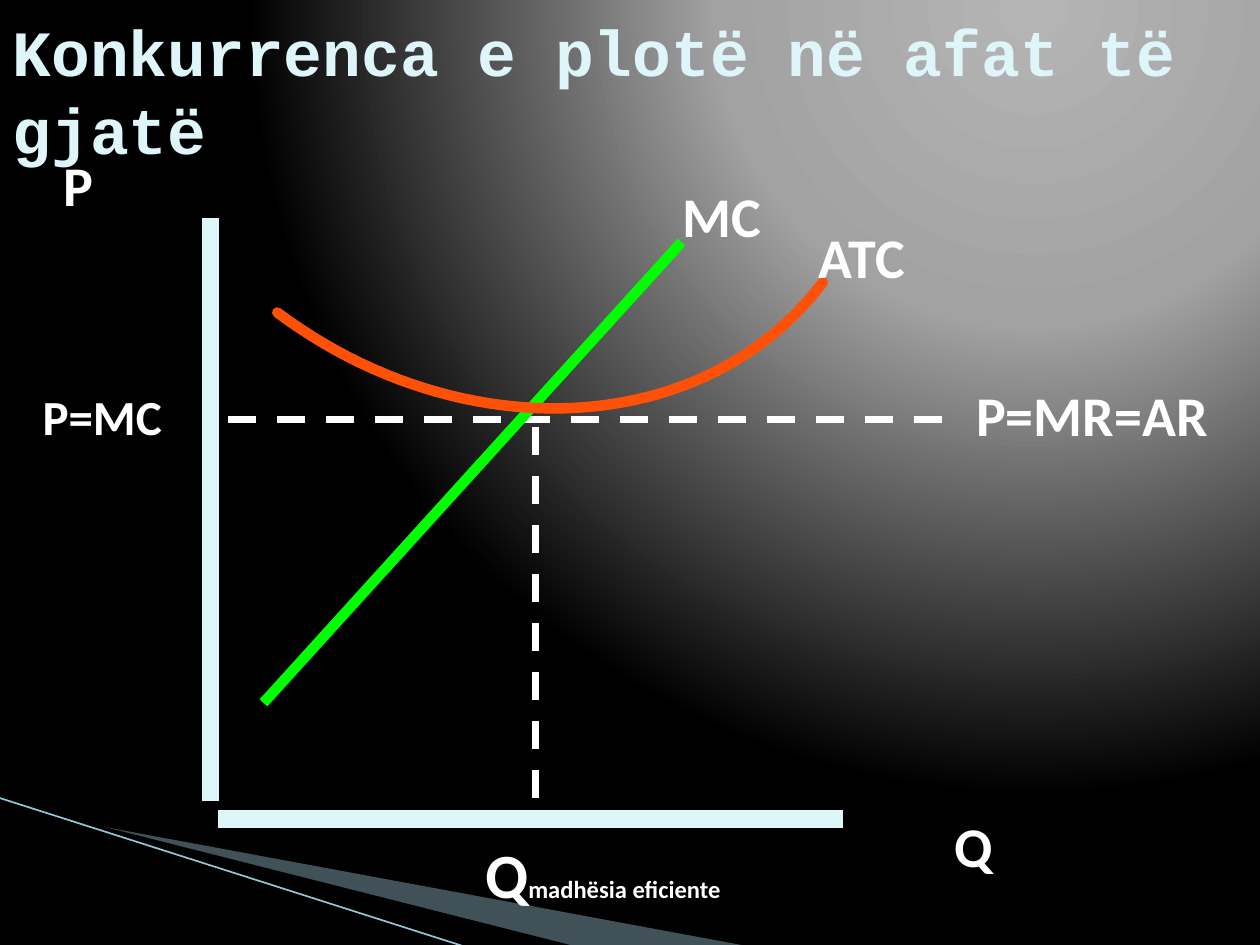
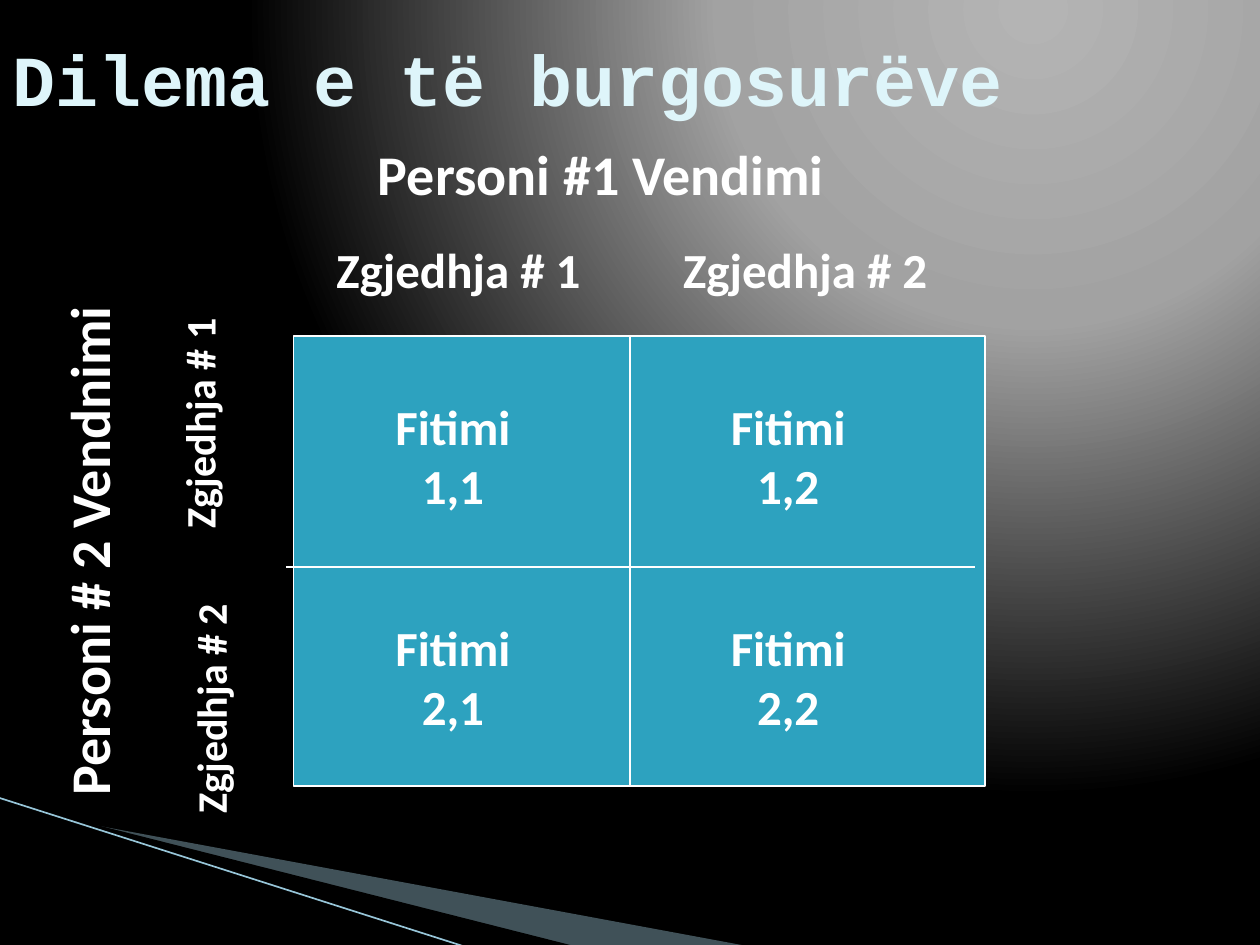
from collections import namedtuple

from lxml import etree
from pptx import Presentation
from pptx.dml.color import RGBColor
from pptx.enum import dml, shapes, text
from pptx.oxml.ns import qn
from pptx.util import Cm, Pt

COLORS = {
    "white": "FFFFFF", "black": "000000", "ice": "DEF5FA", "band": "A0CBDC",
    "edge": "97C5D8", "cost": "00FF00", "average": "FF5008", "matrix": "2DA2BF",
}
GLOW = [(0, "B4B4B4"), (40, "A2A2A2"), (100, "000000")]
BODY_FONT, TITLE_FONT = "Calibri", "Courier New"


class Box(namedtuple("Box", "left top width height")):
    """A region of the slide in centimetres."""

    def at(self, x, y):
        """Turn a place inside the region into slide lengths."""
        return Cm(self.left + x), Cm(self.top + y)


def rgb(name):
    """Look up a colour by name."""
    return RGBColor.from_string(COLORS[name])


def add_words(paragraph, words, size, font=BODY_FONT, color="white"):
    """Add one bold run to a paragraph."""
    run = paragraph.add_run()
    run.text = words
    run.font.name, run.font.size, run.font.bold = font, Pt(size), True
    run.font.color.rgb = rgb(color)


def add_title(slide, box, words, size):
    """Move the title placeholder into its box and fill it."""
    title = slide.shapes.title
    title.left, title.top = box.at(0, 0)
    title.width, title.height = Cm(box.width), Cm(box.height)
    frame = title.text_frame
    frame.auto_size = text.MSO_AUTO_SIZE.NONE
    frame.vertical_anchor = text.MSO_ANCHOR.MIDDLE
    frame.paragraphs[0].alignment = text.PP_ALIGN.LEFT
    add_words(frame.paragraphs[0], words, size, TITLE_FONT, "ice")


def add_label(slide, box, place, size, lines, turn=0, centred=False, wrap=False):
    """Add a label whose lines are lists of (words, points) runs or plain words."""
    x, y, width, height = place
    label = slide.shapes.add_textbox(*box.at(x, y), Cm(width), Cm(height))
    label.rotation = turn
    frame = label.text_frame
    frame.word_wrap = wrap
    frame.auto_size = text.MSO_AUTO_SIZE.SHAPE_TO_FIT_TEXT
    for index, line in enumerate(lines):
        paragraph = frame.add_paragraph() if index else frame.paragraphs[0]
        paragraph.alignment = text.PP_ALIGN.CENTER if centred else text.PP_ALIGN.LEFT
        for words, points in [(line, size)] if isinstance(line, str) else line:
            add_words(paragraph, words, points)


def add_line(slide, box, start, end, color, weight, dashed=False):
    """Draw a straight line between two places of a region."""
    line = slide.shapes.add_connector(
        shapes.MSO_CONNECTOR.STRAIGHT, *box.at(*start), *box.at(*end))
    line.line.color.rgb, line.line.width = rgb(color), Pt(weight)
    if dashed:
        line.line.dash_style = dml.MSO_LINE.DASH
    etree.SubElement(line._element.spPr, qn("a:effectLst"))
    return line


def add_outline(slide, box, points, closed):
    """Draw a freeform through places of a region, without fill or line."""
    first, *others = [box.at(*point) for point in points]
    builder = slide.shapes.build_freeform(*first)
    builder.add_line_segments(others, close=closed)
    outline = builder.convert_to_shape()
    outline.shadow.inherit = False
    outline.fill.background()
    outline.line.fill.background()
    return outline


def add_curve(slide, box, controls, color, weight):
    """Draw a cubic curve from its four control points."""
    steps = 48
    points = []
    for step in range(steps + 1):
        t = step / steps
        weights = ((1 - t) ** 3, 3 * t * (1 - t) ** 2, 3 * t ** 2 * (1 - t), t ** 3)
        points.append([sum(w * c for w, c in zip(weights, axis)) for axis in zip(*controls)])
    curve = add_outline(slide, box, points, closed=False)
    curve.line.color.rgb, curve.line.width = rgb(color), Pt(weight)
    curve.line._get_or_add_ln().set("cap", "rnd")


def paint_background(master):
    """Give the master a circular glow at the upper right."""
    master.background.fill.gradient()
    glow = next(master.element.iter(qn("a:gradFill")))
    for part in list(glow):
        glow.remove(part)
    stops = etree.SubElement(glow, qn("a:gsLst"))
    for place, value in GLOW:
        stop = etree.SubElement(stops, qn("a:gs"), pos=str(place * 1000))
        etree.SubElement(stop, qn("a:srgbClr"), val=value)
    circle = etree.SubElement(glow, qn("a:path"), path="circle")
    etree.SubElement(circle, qn("a:fillToRect"), l="65000", t="0", r="0", b="98000")


def add_corner_bands(master, slide, box):
    """Draw the lower left bands and move them to the master."""
    band = add_outline(slide, box, [(1.4, 0.46), (15.11, 3), (11.58, 3), (1.4, 0.43)], True)
    band.fill.solid()
    band.fill.fore_color.rgb = rgb("band")
    tint = next(band._element.spPr.iter(qn("a:srgbClr")))
    etree.SubElement(tint, qn("a:alpha"), val="40000")
    shade = add_outline(slide, box, [(1.35, 0.4), (11.61, 3), (9.45, 3.02), (1.37, 0.43)], True)
    shade.fill.solid()
    shade.fill.fore_color.rgb = rgb("black")
    edge = add_line(slide, box, (-0.03, 0), (9.42, 3.02), "edge", 0.95)
    for index, part in enumerate((band, shade, edge)):
        next(part._element.iter(qn("p:cNvPr"))).set("id", str(100 + index))
        master.shapes.element.insert(2 + index, part._element)


def add_market_diagram(slide, box):
    """Draw the cost curves, the price line, the axes and their labels."""
    price, quantity = 4.07, 6.56
    add_line(slide, box, (0.36, price), (15.09, price), "white", 4, dashed=True)
    add_line(slide, box, (quantity, price + 0.15), (quantity, 11.97), "white", 4, dashed=True)
    add_line(slide, box, (0, 0), (0, 11.76), "ice", 10)
    add_line(slide, box, (0.15, box.height), (box.width, box.height), "ice", 10)
    add_line(slide, box, (1.07, 9.78), (9.5, 0.49), "cost", 6)
    add_curve(slide, box, [(12.35, 1.3), (9.98, 4.45), (5.08, 4.7), (1.35, 1.91)], "average", 6)
    for words, size, place in (
        ("Q", 32, (14.76, 11.84, 1.37, 1.6)),
        ("MC", 32, (9.27, -0.86, 2.26, 1.6)),
        ("ATC", 32, (12.02, -0.02, 2.82, 1.6)),
        ("P=MR=AR", 32, (15.19, 3.15, 5.97, 1.6)),
        ("P", 32, (-3.2, -1.49, 1.24, 1.6)),
        ("P=MC", 28, (-3.63, 3.28, 3.28, 1.42)),
    ):
        add_label(slide, box, place, size, [words])
    add_label(slide, box, (5.29, 12.32, 5.89, 1.78), 36,
              [[("Q", 36), ("madhësia eficiente", 14)]])


def add_payoff_matrix(slide, box):
    """Draw the two by two matrix with its four payoffs."""
    matrix = slide.shapes.add_shape(
        shapes.MSO_SHAPE.RECTANGLE, *box.at(0, 0), Cm(box.width), Cm(box.height))
    matrix.shadow.inherit = False
    matrix.fill.solid()
    matrix.fill.fore_color.rgb = rgb("matrix")
    matrix.line.color.rgb, matrix.line.width = rgb("white"), Pt(1)
    add_line(slide, box, (6.78, 0), (6.78, box.height), "white", 1)
    add_line(slide, box, (-0.15, 4.65), (13.74, 4.65), "white", 1)
    for row in range(2):
        for column in range(2):
            place = (1.65 + 6.76 * column, 1.09 + 4.45 * row, 3.12, 2.62)
            add_label(slide, box, place, 28, ["Fitimi", f"{row + 1},{column + 1}"], centred=True)


def add_player_labels(slide, box):
    """Name the players and their choices around the matrix."""
    add_label(slide, box, (1.45, -4.09, 10.9, 1.6), 32, ["Personi #1 Vendimi"])
    for column in range(2):
        add_label(slide, box, (0.61 + 6.99 * column, -2.08, 6.22, 1.42), 28,
                  [f"Zgjedhja # {column + 1}"])
    add_label(slide, box, (-10.11, 2.75, 11.91, 1.6), 32, ["Personi # 2 Vendnimi"], turn=270)
    add_label(slide, box, (-4.62, 6.3, 5.87, 1.27), 24, ["Zgjedhja # 2"], turn=270, wrap=True)
    add_label(slide, box, (-4.6, 0.79, 5.38, 1.27), 24, ["Zgjedhja # 1"], turn=270)


def main():
    """Build the two slides and save them."""
    deck = Presentation()
    deck.slide_width, deck.slide_height = Cm(25.4), Cm(19.05)
    layout = deck.slide_layouts.get_by_name("Title Only")
    market, dilemma = [deck.slides.add_slide(layout) for _ in range(2)]
    paint_background(deck.slide_master)
    add_corner_bands(deck.slide_master, market, Box(0, 16.08, 15.11, 3))

    add_title(market, Box(0, 0.64, 24.97, 2.34), "Konkurrenca e plotë në afat të gjatë", 36.9)
    add_market_diagram(market, Box(4.24, 4.39, 12.75, 12.12))

    add_title(dilemma, Box(0, 0.2, 25.2, 2.74), "Dilema e të burgosurëve", 41)
    game = Box(5.92, 6.78, 13.94, 9.07)
    add_payoff_matrix(dilemma, game)
    add_player_labels(dilemma, game)
    deck.save("out.pptx")


if __name__ == "__main__":
    main()
